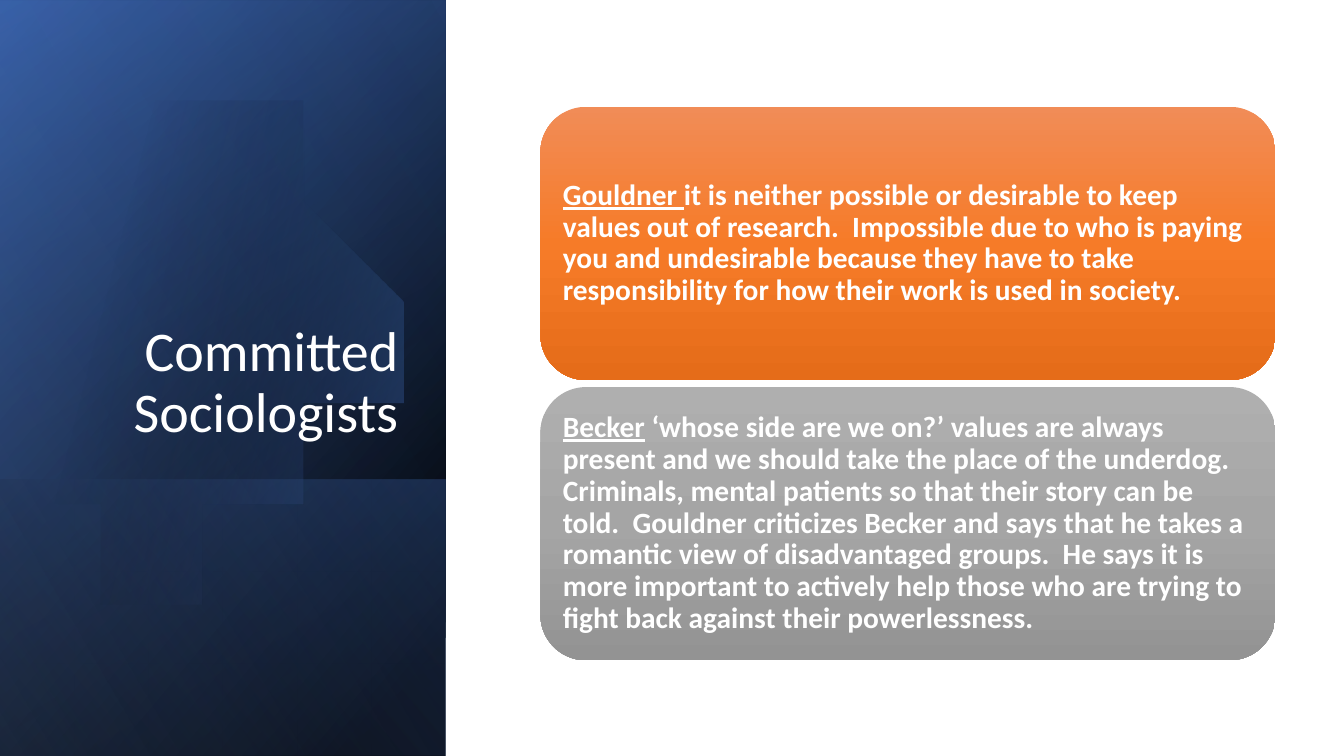
from dataclasses import dataclass

from lxml.etree import SubElement
from pptx import Presentation
from pptx.dml.color import RGBColor
from pptx.enum.shapes import MSO_SHAPE
from pptx.enum.text import MSO_ANCHOR, MSO_AUTO_SIZE, PP_ALIGN
from pptx.oxml.ns import qn
from pptx.shapes.autoshape import Shape
from pptx.slide import Slide
from pptx.text.text import TextFrame
from pptx.util import Inches, Pt

BLACK = RGBColor(0x00, 0x00, 0x00)
WHITE = RGBColor(0xFF, 0xFF, 0xFF)
BLUE = RGBColor(0x44, 0x72, 0xC4)
DARK_BLUE = RGBColor(0x2F, 0x55, 0x97)
LIGHT_BLUE = RGBColor(0x8F, 0xAA, 0xDC)
ORANGES = (RGBColor(0xF1, 0x8C, 0x57), RGBColor(0xF6, 0x7B, 0x28), RGBColor(0xE5, 0x6C, 0x19))
GRAYS = (RGBColor(0xAF, 0xAF, 0xAF), RGBColor(0xA5, 0xA5, 0xA5), RGBColor(0x93, 0x93, 0x93))
FONT = "Calibri"
CARD_LEFT, CARD_TOP, CARD_WIDTH, CARD_HEIGHT, CARD_PITCH = 5.36, 1.06, 7.29, 2.71, 2.78
CURVE_STEPS = 24

Point = tuple[float, float]


@dataclass(frozen=True)
class Stop:
    position: int
    color: RGBColor
    opacity: int = 100


@dataclass(frozen=True)
class Gradient:
    angle: int
    stops: tuple[Stop, ...]


@dataclass(frozen=True)
class Panel:
    left: float
    top: float
    width: float
    gradient: Gradient


@dataclass(frozen=True)
class Card:
    name: str
    statement: str
    colors: tuple[RGBColor, ...]


BASE_PANELS = (
    Panel(-1.54, 1.54, 7.5, Gradient(50, (Stop(8, BLACK), Stop(100, DARK_BLUE)))),
    Panel(-1.54, 1.55, 7.5, Gradient(30, (Stop(0, BLACK, 0), Stop(99, BLUE, 46)))),
    Panel(0.84, 3.92, 2.74, Gradient(130, (Stop(2, BLUE, 29), Stop(100, BLACK, 30)))),
)
TOP_PANEL = Panel(-1.54, 1.54, 7.5, Gradient(120, (Stop(0, BLACK, 0), Stop(99, LIGHT_BLUE, 11))))

DISC_GRADIENT = Gradient(14, (Stop(29, BLACK, 0), Stop(100, BLUE, 43)))
DISC_START: Point = (1.49, 1.1)
DISC_RIGHT_CURVES = (
    ((2.46, 1.12), (3.35, 1.77), (3.63, 2.75)),
    ((3.98, 3.97), (3.28, 5.23), (2.07, 5.58)),
    ((1.31, 5.8), (0.53, 5.61), (-0.03, 5.14)),
)
DISC_LEFT_EDGE = [(-0.15, 5.03), (-0.15, 1.75), (0, 1.61)]
DISC_TOP_CURVES = (
    ((0.23, 1.42), (0.5, 1.28), (0.8, 1.19)),
    ((1.03, 1.13), (1.26, 1.1), DISC_START),
)

CARDS = (
    Card(
        "Gouldner ",
        "it is neither possible or desirable to keep values out of research.  Impossible due to "
        "who is paying you and undesirable because they have to take responsibility for how "
        "their work is used in society.",
        ORANGES,
    ),
    Card(
        "Becker",
        " ‘whose side are we on?’ values are always present and we should take the place of the "
        "underdog. Criminals, mental patients so that their story can be told.  Gouldner "
        "criticizes Becker and says that he takes a romantic view of disadvantaged groups.  He "
        "says it is more important to actively help those who are trying to fight back against "
        "their powerlessness.",
        GRAYS,
    ),
)


def apply_gradient(shape: Shape, gradient: Gradient) -> None:
    shape.shadow.inherit = False
    shape.line.fill.background()
    shape.fill.gradient()
    fill = shape._element.spPr.find(qn("a:gradFill"))
    for child in list(fill):
        fill.remove(child)
    stop_list = SubElement(fill, qn("a:gsLst"))
    for stop in gradient.stops:
        entry = SubElement(stop_list, qn("a:gs"), pos=str(stop.position * 1000))
        color = SubElement(entry, qn("a:srgbClr"), val=str(stop.color))
        if stop.opacity < 100:
            SubElement(color, qn("a:alpha"), val=str(stop.opacity * 1000))
    SubElement(fill, qn("a:lin"), ang=str(gradient.angle * 60000), scaled="0")


def add_panel(slide: Slide, panel: Panel) -> None:
    shape = slide.shapes.add_shape(
        MSO_SHAPE.RECTANGLE,
        Inches(panel.left), Inches(panel.top), Inches(panel.width), Inches(4.42),
    )
    shape.rotation = 90
    shape._element.spPr.find(qn("a:xfrm")).set("flipH", "1")
    apply_gradient(shape, panel.gradient)


def curve_points(start: Point, curves: tuple[tuple[Point, Point, Point], ...]) -> list[Point]:
    points = []
    for first, second, end in curves:
        for step in range(1, CURVE_STEPS + 1):
            t = step / CURVE_STEPS
            weights = ((1 - t) ** 3, 3 * t * (1 - t) ** 2, 3 * t * t * (1 - t), t ** 3)
            corners = (start, first, second, end)
            points.append(tuple(
                sum(weight * corner[axis] for weight, corner in zip(weights, corners))
                for axis in (0, 1)
            ))
        start = end
    return points


def add_disc(slide: Slide) -> None:
    points = (
        curve_points(DISC_START, DISC_RIGHT_CURVES)
        + DISC_LEFT_EDGE
        + curve_points(DISC_LEFT_EDGE[-1], DISC_TOP_CURVES)
    )
    builder = slide.shapes.build_freeform(*DISC_START, scale=Inches(1))
    builder.add_line_segments(points, close=True)
    apply_gradient(builder.convert_to_shape(), DISC_GRADIENT)


def format_frame(frame: TextFrame, anchor: MSO_ANCHOR, alignment: PP_ALIGN) -> None:
    values = {"word_wrap": True, "auto_size": MSO_AUTO_SIZE.NONE, "vertical_anchor": anchor}
    for name, value in values.items():
        setattr(frame, name, value)
    frame.paragraphs[0].alignment = alignment
    frame.paragraphs[0].line_spacing = 0.9


def add_run(frame: TextFrame, text: str, size: int, **extra: bool) -> None:
    run = frame.paragraphs[0].add_run()
    run.text = text
    run.font.color.rgb = WHITE
    for name, value in {"name": FONT, "size": Pt(size), **extra}.items():
        setattr(run.font, name, value)


def add_title(slide: Slide) -> None:
    title = slide.shapes.title
    box = {"left": 0.64, "top": 1.84, "width": 3.41, "height": 2.62}
    for name, value in box.items():
        setattr(title, name, Inches(value))
    format_frame(title.text_frame, MSO_ANCHOR.BOTTOM, PP_ALIGN.RIGHT)
    add_run(title.text_frame, "Committed Sociologists", 40)
    slide.shapes._spTree.append(title._element)


def add_card(slide: Slide, card: Card, top: float) -> None:
    shape = slide.shapes.add_shape(
        MSO_SHAPE.ROUNDED_RECTANGLE,
        Inches(CARD_LEFT), Inches(top), Inches(CARD_WIDTH), Inches(CARD_HEIGHT),
    )
    stops = tuple(Stop(50 * index, color) for index, color in enumerate(card.colors))
    apply_gradient(shape, Gradient(90, stops))
    frame = shape.text_frame
    for side in ("left", "top", "right", "bottom"):
        setattr(frame, f"margin_{side}", Inches(0.09))
    format_frame(frame, MSO_ANCHOR.MIDDLE, PP_ALIGN.LEFT)
    add_run(frame, card.name, 21, bold=True, underline=True)
    add_run(frame, card.statement, 21, bold=True, underline=False)


def main() -> None:
    presentation = Presentation()
    presentation.slide_width = Inches(13.33)
    presentation.slide_height = Inches(7.5)
    slide = presentation.slides.add_slide(presentation.slide_layouts[5])
    for panel in BASE_PANELS:
        add_panel(slide, panel)
    add_disc(slide)
    add_panel(slide, TOP_PANEL)
    add_title(slide)
    for index, card in enumerate(CARDS):
        add_card(slide, card, CARD_TOP + index * CARD_PITCH)
    presentation.save("out.pptx")


if __name__ == "__main__":
    main()
